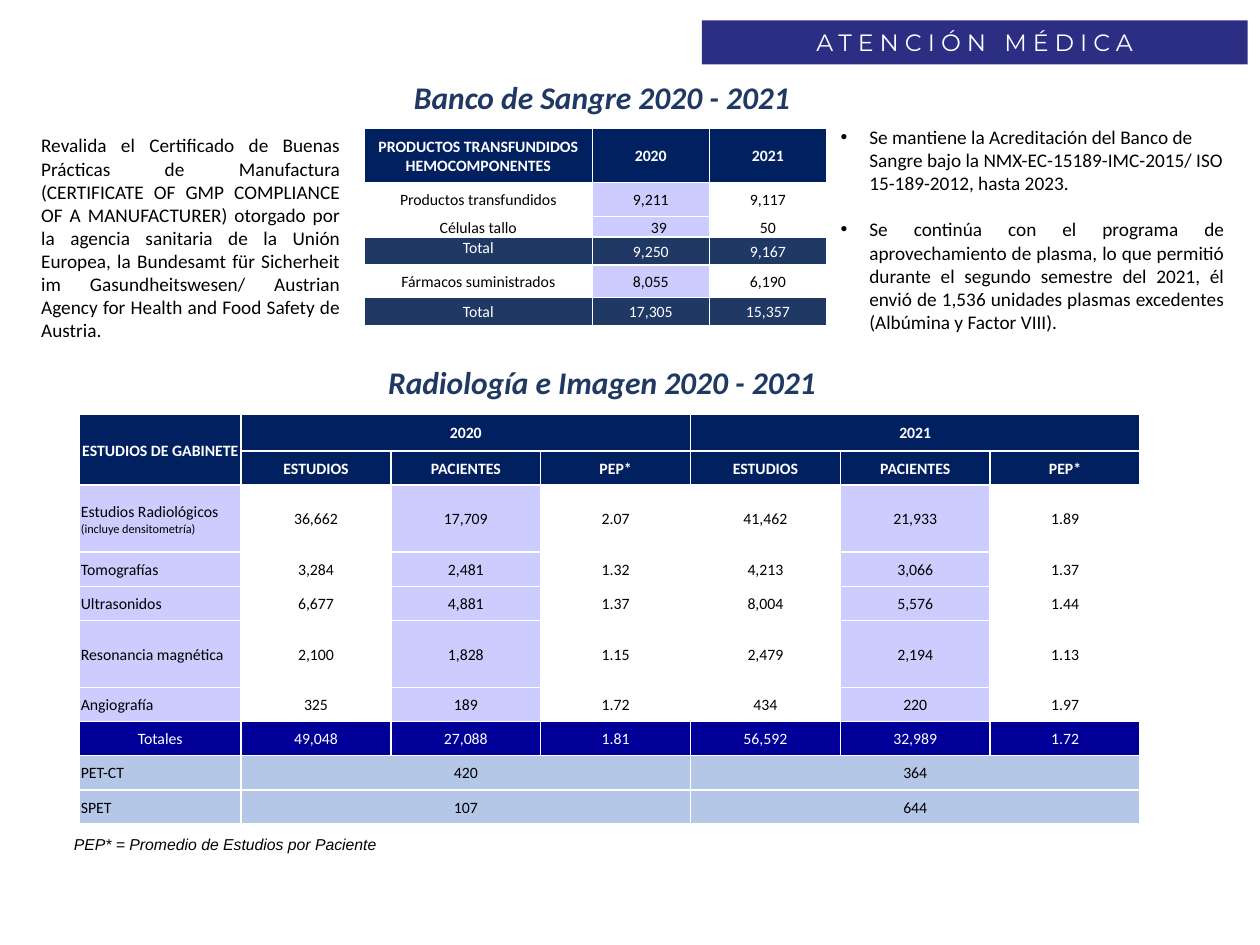
"""Build the blood bank and radiology summary slide."""
from dataclasses import dataclass
from typing import Optional, Sequence

from lxml import etree
from pptx import Presentation
from pptx import util as u
from pptx.dml.color import RGBColor
from pptx.enum import shapes, text
from pptx.oxml import ns

NAVY, BLUE, ROYAL = "002060", "203864", "000099"
LILAC, SKY, WHITE, BLACK = "CCCCFF", "B4C7E7", "FFFFFF", "000000"
LEFT, CENTER, JUSTIFY = text.PP_ALIGN.LEFT, text.PP_ALIGN.CENTER, text.PP_ALIGN.JUSTIFY
MIDDLE = text.MSO_ANCHOR.MIDDLE


@dataclass
class Box:
    left: float
    top: float
    width: float
    height: float

    def lengths(self) -> list:
        return [u.Cm(v) for v in (self.left, self.top, self.width, self.height)]


@dataclass
class Style:
    size: float
    color: str = BLACK
    font: str = "Calibri"
    bold: bool = False
    italic: bool = False
    align: text.PP_ALIGN = LEFT


@dataclass
class Row:
    height: float
    texts: Sequence[Optional[str]]
    fills: Sequence[Optional[str]]
    color: str = BLACK
    bold: bool = False
    first_align: text.PP_ALIGN = CENTER


def rgb(value: str) -> RGBColor:
    return RGBColor.from_string(value)


def format_paragraph(p, style: Style) -> None:
    p.alignment = style.align
    f = p.font
    f.size, f.name, f.bold, f.italic = u.Pt(style.size), style.font, style.bold, style.italic
    f.color.rgb = rgb(style.color)


def write(tf, words: str, style: Style) -> None:
    tf.text = words
    format_paragraph(tf.paragraphs[0], style)


def add_heading(s, box: Box, words: str) -> None:
    sp = s.shapes.add_shape(shapes.MSO_SHAPE.ROUNDED_RECTANGLE, *box.lengths())
    sp.adjustments[0] = 0.44
    sp.shadow.inherit = False
    sp.fill.background()
    sp.line.fill.background()
    sp.text_frame.vertical_anchor = MIDDLE
    write(sp.text_frame, words, Style(18, BLUE, bold=True, italic=True, align=CENTER))


def add_text(s, box: Box, words: str, style: Style, wrap: bool = True) -> None:
    tf = s.shapes.add_textbox(*box.lengths()).text_frame
    tf.word_wrap = wrap
    tf.auto_size = text.MSO_AUTO_SIZE.SHAPE_TO_FIT_TEXT
    write(tf, words, style)


def add_borders(cell) -> None:
    tc_pr = cell._tc.get_or_add_tcPr()
    for side in ("a:lnL", "a:lnR", "a:lnT", "a:lnB"):
        ln = etree.SubElement(tc_pr, ns.qn(side), w=str(u.Pt(1)))
        fill = etree.SubElement(ln, ns.qn("a:solidFill"))
        etree.SubElement(fill, ns.qn("a:srgbClr"), val=WHITE)


def add_table(s, left: float, top: float, widths: Sequence[float], rows: Sequence[Row]):
    box = Box(left, top, sum(widths), sum(row.height for row in rows))
    table = s.shapes.add_table(len(rows), len(widths), *box.lengths()).table
    table.first_row = table.horz_banding = False
    for column, width in zip(table.columns, widths):
        column.width = u.Cm(width)
    for i, row in enumerate(rows):
        table.rows[i].height = u.Cm(row.height)
        for j, (words, fill) in enumerate(zip(row.texts, row.fills)):
            cell = table.cell(i, j)
            add_borders(cell)
            if fill:
                cell.fill.solid()
                cell.fill.fore_color.rgb = rgb(fill)
            else:
                cell.fill.background()
            cell.margin_left = cell.margin_right = cell.margin_top = u.Cm(0.03)
            cell.margin_bottom = 0
            cell.vertical_anchor = MIDDLE
            align = CENTER if j else row.first_align
            write(cell.text_frame, words or "", Style(9, row.color, bold=row.bold, align=align))
    return table


def add_blood_table(s) -> None:
    plain = (None, LILAC, None)
    table = add_table(s, 7.34, 2.59, (4.6, 2.36, 2.36), [
        Row(1.09, ("PRODUCTOS TRANSFUNDIDOS HEMOCOMPONENTES", "2020", "2021"),
            [NAVY] * 3, WHITE, True),
        Row(0.69, ("Productos transfundidos", "9,211", "9,117"), plain),
        Row(0.23, ("Células tallo", "39", "50"), plain),
        Row(0.56, ("Total", "9,250", "9,167"), [BLUE] * 3, WHITE),
        Row(0.66, ("Fármacos suministrados", "8,055", "6,190"), plain),
        Row(0.56, ("Total", "17,305", "15,357"), [BLUE] * 3, WHITE),
    ])
    table.cell(2, 1).margin_left = u.Cm(0.36)
    table.cell(3, 0).vertical_anchor = text.MSO_ANCHOR.TOP


def add_imaging_table(s) -> None:
    low, high = 0.69, 1.35
    studies = [
        (high, "Estudios Radiológicos ", "36,662", "17,709", "2.07", "41,462", "21,933", "1.89"),
        (low, "Tomografías", "3,284", "2,481", "1.32", "4,213", "3,066", "1.37"),
        (low, "Ultrasonidos", "6,677", "4,881", "1.37", "8,004", "5,576", "1.44"),
        (high, "Resonancia magnética", "2,100", "1,828", "1.15", "2,479", "2,194", "1.13"),
        (low, "Angiografía", "325", "189", "1.72", "434", "220", "1.97"),
    ]
    scans = [("PET-CT", "420", "364"), ("SPET", "107", "644")]
    lilac_columns = (LILAC, None, LILAC, None, None, LILAC, None)
    rows = [
        Row(0.73, ("ESTUDIOS DE GABINETE", "2020", None, None, "2021", None, None),
            [NAVY] * 7, WHITE, True),
        Row(low, (None, *("ESTUDIOS", "PACIENTES", "PEP*") * 2), [NAVY] * 7, WHITE, True),
        *(Row(height, texts, lilac_columns, first_align=LEFT) for height, *texts in studies),
        Row(low, ("Totales", "49,048", "27,088", "1.81", "56,592", "32,989", "1.72"),
            [ROYAL] * 7, WHITE),
        *(Row(low, (name, a, None, None, b, None, None), [SKY] * 7, first_align=LEFT)
          for name, a, b in scans),
    ]
    table = add_table(s, 1.6, 8.36, [3.26] + [3.02] * 6, rows)
    table.cell(0, 0).merge(table.cell(1, 0))
    for i in (0, 8, 9):
        for j in (1, 4):
            table.cell(i, j).merge(table.cell(i, j + 2))
    r = table.cell(2, 0).text_frame.paragraphs[0].add_run()
    r.text = "(incluye densitometría)"
    r.font.size = u.Pt(7)


def place(sp, box: Box) -> None:
    sp.left, sp.top, sp.width, sp.height = box.lengths()
    sp.text_frame.auto_size = text.MSO_AUTO_SIZE.NONE


def fill_title(sp) -> None:
    place(sp, Box(14.15, 0.41, 11, 0.89))
    sp.fill.solid()
    sp.fill.fore_color.rgb = rgb("2C2E83")
    sp.text_frame.vertical_anchor = MIDDLE
    write(sp.text_frame, "ATENCIÓN MÉDICA", Style(13.5, WHITE, "Montserrat", align=CENTER))
    sp.text_frame.paragraphs[0].runs[0]._r.get_or_add_rPr().set("spc", "350")


def fill_body(sp) -> None:
    place(sp, Box(16.69, 2.39, 8.25, 4.5))
    tf = sp.text_frame
    items = [
        ("Se mantiene la Acreditación del Banco de Sangre bajo la NMX-EC-15189-IMC-2015/ ISO "
         "15-189-2012, hasta 2023.", LEFT, 0),
        ("Se continúa con el programa de aprovechamiento de plasma, lo que permitió durante el "
         "segundo semestre del 2021, él envió de 1,536 unidades plasmas excedentes (Albúmina y "
         "Factor VIII).", JUSTIFY, 13.4),
    ]
    tf.text = "\n".join(words for words, _, _ in items)
    for p, (_, align, gap) in zip(tf.paragraphs, items):
        p_pr = p._p.get_or_add_pPr()
        p_pr.set("marL", str(u.Cm(0.58)))
        p_pr.set("indent", str(u.Cm(-0.58)))
        p.space_before = u.Pt(gap)
        format_paragraph(p, Style(11, align=align))


def main() -> None:
    prs = Presentation()
    prs.slide_width, prs.slide_height = u.Cm(25.4), u.Cm(19.05)
    s = prs.slides.add_slide(prs.slide_layouts[1])
    fill_title(s.shapes.title)
    fill_body(s.placeholders[1])
    add_heading(s, Box(7.19, 1.4, 9.9, 1.09), "Banco de Sangre 2020 - 2021")
    add_text(s, Box(0.58, 2.57, 6.53, 4.5),
             "Revalida el Certificado de Buenas Prácticas de Manufactura (CERTIFICATE OF GMP "
             "COMPLIANCE OF A MANUFACTURER) otorgado por la agencia sanitaria de la Unión Europea, "
             "la Bundesamt für Sicherheit im Gasundheitswesen/ Austrian Agency for Health and Food "
             "Safety de Austria.", Style(11, align=JUSTIFY))
    add_blood_table(s)
    add_heading(s, Box(7.19, 7.16, 9.9, 1.09), "Radiología e Imagen 2020 - 2021")
    add_imaging_table(s)
    add_text(s, Box(1.24, 16.71, 6.65, 0.64), "PEP* = Promedio de Estudios por Paciente",
             Style(9, font="Arial", italic=True), wrap=False)
    prs.save("out.pptx")


if __name__ == "__main__":
    main()
